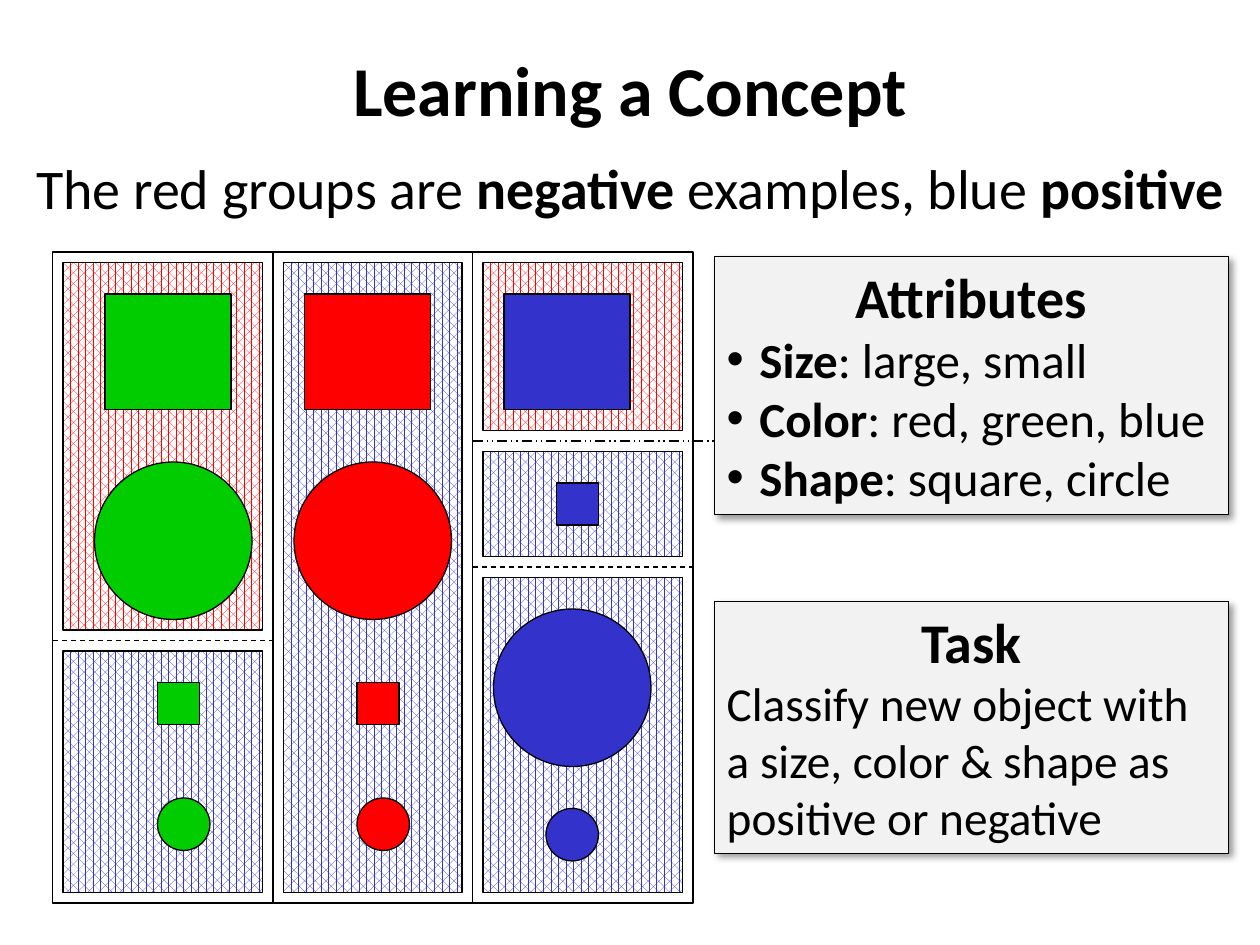
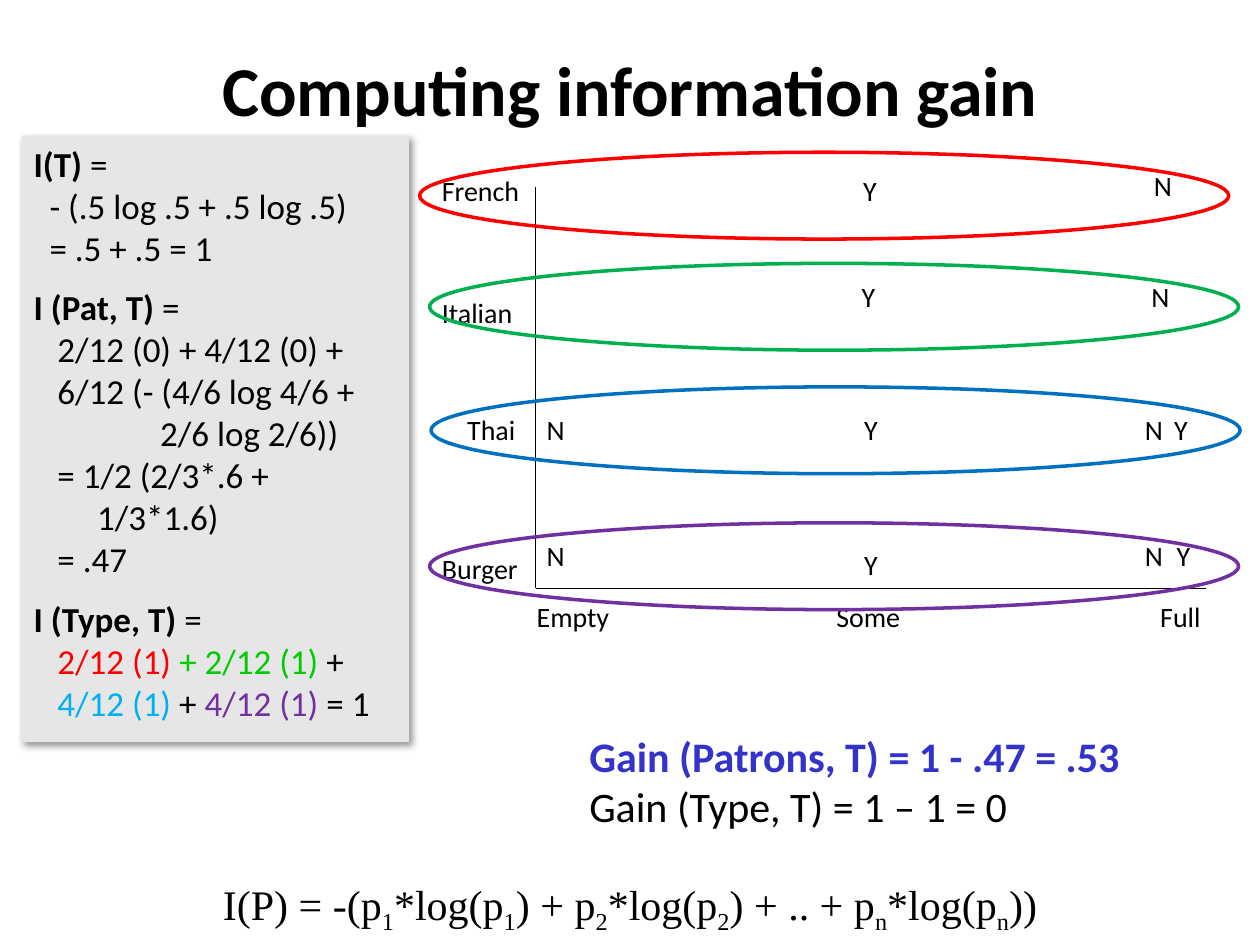
import lxml.etree
import pptx
import pptx.dml.color
import pptx.enum.dml
import pptx.enum.shapes
import pptx.enum.text
import pptx.oxml.ns
import pptx.util

Cm = pptx.util.Cm
Pt = pptx.util.Pt
qn = pptx.oxml.ns.qn
SHAPE = pptx.enum.shapes.MSO_SHAPE
DASH = pptx.enum.dml.MSO_LINE
ALIGN = pptx.enum.text.PP_ALIGN
ANCHOR = pptx.enum.text.MSO_ANCHOR

COLORS = {
    "black": "000000", "white": "FFFFFF", "panel": "F2F2F2", "work": "E6E6E6",
    "red": "FF0000", "green": "00CC00", "blue": "3333CC", "sky": "00B0F0",
    "italian": "00B050", "thai": "0070C0", "purple": "7030A0",
}
SLIDE_W, SLIDE_H = 25.4, 19.05
GRID = 2.54 / 12


def rgb(name):
    return pptx.dml.color.RGBColor.from_string(COLORS[name])


def add_child(parent, tag, **attributes):
    child = lxml.etree.SubElement(parent, qn(tag))
    for key, value in attributes.items():
        child.set(key, str(value))
    return child


def add_run(paragraph, text, size, color="black", bold=False, font="Calibri", baseline=0):
    run = paragraph.add_run()
    run.text = text
    run.font.size = Pt(size)
    run.font.name = font
    run.font.bold = bold
    run.font.color.rgb = rgb(color)
    if baseline:
        run.font._element.set("baseline", str(baseline * 1000))


def next_paragraph(frame, align=ALIGN.LEFT, before=0, indent=0, hanging=0):
    first = frame.paragraphs[0]
    paragraph = frame.add_paragraph() if first.runs else first
    paragraph.alignment = align
    paragraph.space_before = Pt(before)
    if indent:
        properties = paragraph._p.get_or_add_pPr()
        properties.set("marL", str(Cm(indent)))
        properties.set("indent", str(Cm(-hanging)))
    return paragraph


def set_frame(frame, wrap=True, anchor=ANCHOR.TOP):
    frame.word_wrap = wrap
    frame.vertical_anchor = anchor
    frame.auto_size = pptx.enum.text.MSO_AUTO_SIZE.SHAPE_TO_FIT_TEXT
    return frame


def add_text_frame(slide, box, wrap=True):
    textbox = slide.shapes.add_textbox(*map(Cm, box))
    return set_frame(textbox.text_frame, wrap)


def add_figure(slide, kind, box, fill=None, line="black", width=0.75):
    figure = slide.shapes.add_shape(kind, *map(Cm, box))
    figure.shadow.inherit = False
    if fill:
        figure.fill.solid()
        figure.fill.fore_color.rgb = rgb(fill)
    else:
        figure.fill.background()
    if line:
        figure.line.color.rgb = rgb(line)
        figure.line.width = Pt(width)
    else:
        figure.line.fill.background()
    return figure


def add_line(slide, start, end, dash=None):
    line = slide.shapes.add_connector(
        pptx.enum.shapes.MSO_CONNECTOR.STRAIGHT, *map(Cm, (*start, *end)))
    line.line.color.rgb = rgb("black")
    line.line.width = Pt(0.75)
    if dash:
        line.line.dash_style = dash
    add_child(line._element.spPr, "a:effectLst")


def add_panel(slide, box, fill, line, opacity):
    panel = add_figure(slide, SHAPE.RECTANGLE, box, fill, line, 0.25)
    effects = panel._element.spPr.find(qn("a:effectLst"))
    shadow = add_child(effects, "a:outerShdw", blurRad=Pt(4), dist=Pt(3),
                       dir=45 * 60000, algn="tl", rotWithShape=0)
    tint = add_child(shadow, "a:srgbClr", val=COLORS["black"])
    add_child(tint, "a:alpha", val=opacity * 1000)
    return set_frame(panel.text_frame)


def add_title(slide, text):
    frame = add_text_frame(slide, (0, 0.2, SLIDE_W, 3.18))
    frame.auto_size = pptx.enum.text.MSO_AUTO_SIZE.NONE
    frame.vertical_anchor = ANCHOR.MIDDLE
    add_run(next_paragraph(frame, ALIGN.CENTER), text, 40, bold=True)


def add_subtitle(slide, box):
    paragraph = next_paragraph(add_text_frame(slide, box), ALIGN.CENTER)
    parts = ["The red groups are ", "negative", " examples, blue ", "positive"]
    for index, part in enumerate(parts):
        add_run(paragraph, part, 32, bold=index % 2 == 1)


def add_examples(slide, left, top):
    def place(column, row, width, height):
        return left + column * GRID, top + row * GRID, width * GRID, height * GRID

    groups = [
        ("blue", 1, 38, 19, 23), ("blue", 41, 31, 19, 30), ("blue", 41, 19, 19, 10),
        ("blue", 22, 1, 17, 60), ("red", 41, 1, 19, 16), ("red", 1, 1, 19, 35),
    ]
    for color, *cells in groups:
        group = add_figure(slide, SHAPE.RECTANGLE, place(*cells))
        group.fill.patterned()
        group.fill.pattern = pptx.enum.dml.MSO_PATTERN.PERCENT_60
        group.fill.fore_color.rgb = rgb(color)
        group.fill.back_color.rgb = rgb("white")

    tall_column = [(5, 4), (10, 41), (4, 20), (10, 52)]
    split_column = [(5, 4), (10, 22), (4, 34), (9, 53)]
    objects = [(SHAPE.RECTANGLE, 12, 11), (SHAPE.RECTANGLE, 4, 4),
               (SHAPE.OVAL, 15, 15), (SHAPE.OVAL, 5, 5)]
    columns = [("green", tall_column), ("red", tall_column), ("blue", split_column)]
    for index, (color, spots) in enumerate(columns):
        for (column, row), (kind, width, height) in zip(spots, objects):
            add_figure(slide, kind, place(column + 19 * index, row, width, height), color)

    add_figure(slide, SHAPE.RECTANGLE, place(0, 0, 61, 62))
    dividers = [
        (21, 0, 21, 62, None), (40, 0, 40, 62, None), (0, 37, 21, 37, DASH.DASH),
        (40, 30, 61, 30, DASH.DASH), (40, 18, 63, 18, DASH.DASH_DOT_DOT),
    ]
    for x1, y1, x2, y2, dash in dividers:
        add_line(slide, place(x1, y1, 0, 0)[:2], place(x2, y2, 0, 0)[:2], dash)


def add_attributes(slide, box):
    frame = add_panel(slide, box, "panel", "black", 40)
    add_run(next_paragraph(frame, ALIGN.CENTER), "Attributes", 32, bold=True)
    attributes = [("Size", "large, small"), ("Color", "red, green, blue"),
                  ("Shape", "square, circle")]
    for name, values in attributes:
        paragraph = next_paragraph(frame, indent=0.66, hanging=0.66)
        properties = paragraph._p.get_or_add_pPr()
        add_child(properties, "a:buFont", typeface="Arial")
        add_child(properties, "a:buChar", char="•")
        add_run(paragraph, name, 28, bold=True)
        add_run(paragraph, ": " + values, 28)


def add_task(slide, box):
    frame = add_panel(slide, box, "panel", "black", 40)
    add_run(next_paragraph(frame, ALIGN.CENTER), "Task", 32, bold=True)
    add_run(next_paragraph(frame),
            "Classify new object with a size, color & shape as positive or negative", 27)


def add_working(slide, box):
    frame = add_panel(slide, box, "work", None, 43)
    steps = [
        ("I(T) ", [(0.32, "- (.5 log .5 + .5 log .5)"), (0.32, "= .5 + .5 = 1")]),
        ("I (Pat, T) ", [
            (0.48, "2/12 (0) + 4/12 (0) +"), (0.48, "6/12 (- (4/6 log 4/6 +"),
            (2.55, "2/6 log 2/6))"), (0.48, "= 1/2 (2/3*.6 +"),
            (1.28, "1/3*1.6)"), (0.48, "= .47")]),
        ("I (Type, T) ", []),
    ]
    for index, (name, lines) in enumerate(steps):
        heading = next_paragraph(frame, before=10 if index else 0)
        add_run(heading, name, 20, bold=True)
        add_run(heading, "=", 20)
        for indent, text in lines:
            add_run(next_paragraph(frame, indent=indent), text, 20)

    type_lines = [
        [("2/12 (1) ", "red"), ("+ 2/12 (1) ", "green"), ("+", "black")],
        [("4/12 (1)", "sky"), (" + ", "black"), ("4/12 (1)", "purple"), (" = 1", "black")],
    ]
    for terms in type_lines:
        paragraph = next_paragraph(frame, indent=0.48)
        for text, color in terms:
            add_run(paragraph, text, 20, color)


def add_plot(slide, left, top, width, height):
    def label(text, x, y, label_width):
        frame = add_text_frame(slide, (left + x, top + y, label_width, 0.94), wrap=False)
        add_run(next_paragraph(frame), text, 16)

    corner = (left, top + height)
    add_line(slide, (left, top), corner)
    add_line(slide, corner, (left + width, top + height))
    for patrons, x, label_width in [("Empty", -0.23, 2.01), ("Some", 5.81, 1.8),
                                    ("Full", 12.34, 1.35)]:
        label(patrons, x, height + 0.1, label_width)

    cuisines = [
        ("French", -2.14, -0.38, 2.08, [("Y", 6.35, -0.38), ("N", 12.21, -0.48)]),
        ("Italian", -2.14, 2.08, 1.96, [("Y", 6.32, 1.75), ("N", 12.16, 1.75)]),
        ("Thai", -1.63, 4.44, 1.55, [("N", -0.03, 4.44), ("Y", 6.37, 4.44),
                                     ("N", 12.03, 4.44), ("Y", 12.62, 4.44)]),
        ("Burger", -2.14, 7.24, 2.08, [("N", -0.03, 6.98), ("Y", 6.37, 7.16),
                                       ("N", 12.03, 6.98), ("Y", 12.67, 6.98)]),
    ]
    for cuisine, x, y, label_width, answers in cuisines:
        label(cuisine, x, y, label_width)
        for answer, answer_x, answer_y in answers:
            label(answer, answer_x, answer_y, 0.79 if answer == "Y" else 0.89)

    rings = [("red", -2.34, -0.69), ("italian", -2.14, 1.55),
             ("thai", -2.11, 4.04), ("purple", -2.14, 6.78)]
    for color, x, y in rings:
        add_figure(slide, SHAPE.OVAL, (left + x, top + y, 16.31, 1.75), None, color, 2)


def add_gains(slide, box):
    frame = add_text_frame(slide, box)
    add_run(next_paragraph(frame), "Gain (Patrons, T) = 1 - .47 = .53", 24, "blue", True)
    add_run(next_paragraph(frame), "Gain (Type, T) = 1 – 1 = 0", 24)


def add_formula(slide, box):
    paragraph = next_paragraph(add_text_frame(slide, box), ALIGN.CENTER)
    parts = ["I(P) = -(p", "1", "*log(p", "1", ") + p", "2", "*log(p", "2",
             ") + .. + p", "n", "*log(p", "n", "))"]
    for index, part in enumerate(parts):
        add_run(paragraph, part, 24, font="Times New Roman",
                baseline=-25 if index % 2 else 0)


def build_concept_slide(slide):
    add_title(slide, "Learning a Concept")
    add_examples(slide, 5 * GRID, 24 * GRID)
    add_attributes(slide, (14.4, 5.16, 10.36, 5.21))
    add_subtitle(slide, (0, 2.97, SLIDE_W, 1.63))
    add_task(slide, (14.4, 12.12, 10.36, 5.08))


def build_gain_slide(slide):
    add_working(slide, (0.43, 2.74, 7.82, 12.22))
    add_title(slide, "Computing information gain")
    add_plot(slide, 10.8, 3.76, 13.51, 8.1)
    add_gains(slide, (11.63, 14.6, 12.07, 2.31))
    add_formula(slide, (0, 17.58, SLIDE_W, 1.27))


def main():
    deck = pptx.Presentation()
    deck.slide_width, deck.slide_height = Cm(SLIDE_W), Cm(SLIDE_H)
    for build in (build_concept_slide, build_gain_slide):
        build(deck.slides.add_slide(deck.slide_layouts[6]))
    deck.save("out.pptx")


if __name__ == "__main__":
    main()
